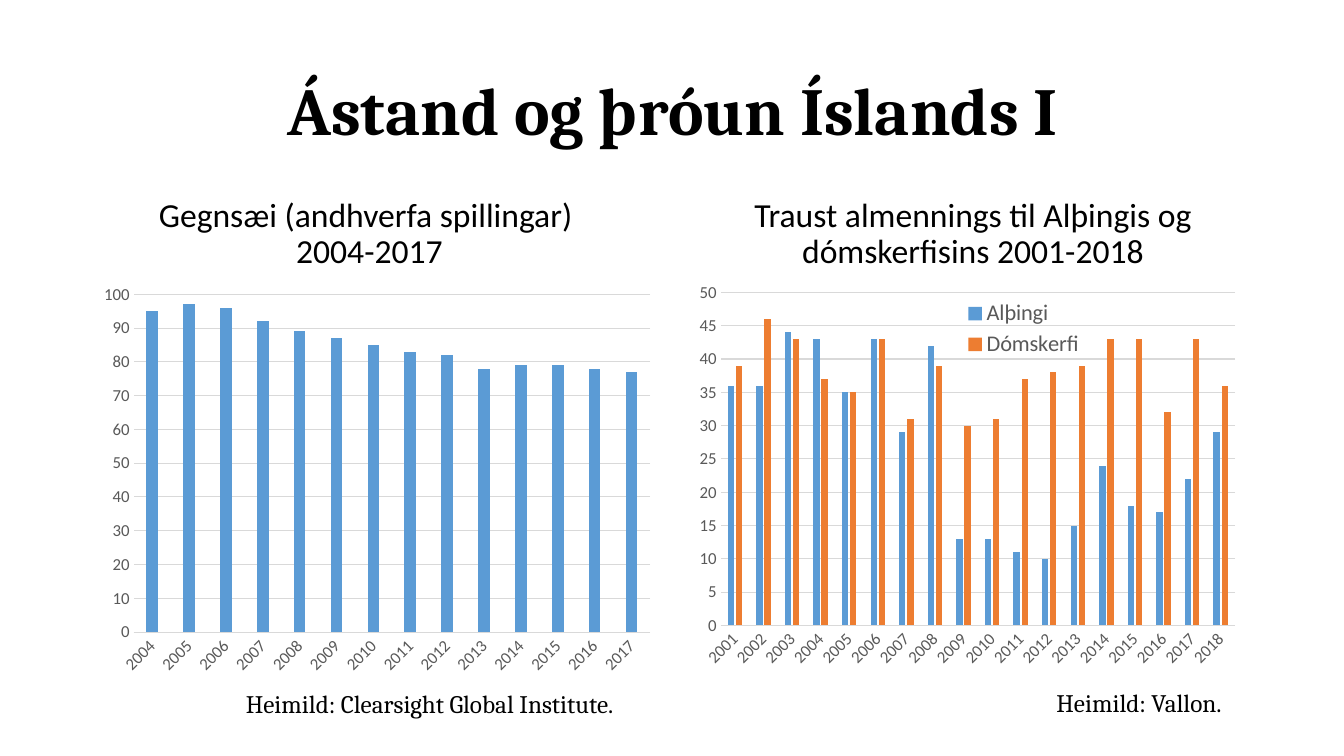
from pptx import Presentation
from pptx.chart.data import CategoryChartData
from pptx.dml.color import RGBColor
from pptx.enum.chart import XL_CHART_TYPE, XL_LEGEND_POSITION, XL_TICK_MARK
from pptx.enum.text import MSO_ANCHOR, PP_ALIGN
from pptx.oxml.xmlchemy import OxmlElement
from pptx.util import Inches, Pt

CLUSTERED = XL_CHART_TYPE.COLUMN_CLUSTERED
LEGEND_BOTTOM = XL_LEGEND_POSITION.BOTTOM
NO_TICK = XL_TICK_MARK.NONE
TOP, MIDDLE, BOTTOM = MSO_ANCHOR.TOP, MSO_ANCHOR.MIDDLE, MSO_ANCHOR.BOTTOM
LEFT, CENTER = PP_ALIGN.LEFT, PP_ALIGN.CENTER

# Content
TITLE = "Ástand og þróun Íslands I"
PANELS = [
    {
        "heading": "Gegnsæi (andhverfa spillingar) \v2004-2017",
        "heading_at": (0.78, 1.84, 5.77, 0.9),
        "source": "Heimild: Clearsight Global Institute.",
        "source_at": (2.34, 6.78, 4.22, 0.4),
        "chart_at": (0.92, 2.74, 5.64, 4.03),
        "years": range(2004, 2018),
        "series": {
            "Gegnsæi": [95, 97, 96, 92, 89, 87, 85, 83, 82, 78, 79, 79, 78, 77],
        },
        "scale": (100, 10),
    },
    {
        "heading": "Traust almennings til Alþingis og dómskerfisins 2001-2018",
        "heading_at": (6.56, 1.84, 6.18, 0.9),
        "source": "Heimild: Vallon.",
        "source_at": (10.38, 6.77, 1.93, 0.4),
        "chart_at": (6.75, 2.74, 5.67, 4.03),
        "years": range(2001, 2019),
        "series": {
            "Alþingi": [36, 36, 44, 43, 35, 43, 29, 42, 13,
                        13, 11, 10, 15, 24, 18, 17, 22, 29],
            "Dómskerfi": [39, 46, 43, 37, 35, 43, 31, 39, 30,
                          31, 37, 38, 39, 43, 43, 32, 43, 36],
        },
        "scale": (50, 5),
        "plot_at": (0.07, 0.04, 0.9, 0.82),
        "legend_at": (0.49, 0.05, 0.22, 0.16),
    },
]

THEME = {
    "heading_font": "Cambria",
    "body_font": "Calibri",
    "text": RGBColor.from_string("000000"),
    "label": RGBColor.from_string("595959"),
    "grid": RGBColor.from_string("D9D9D9"),
    "series": [RGBColor.from_string(c) for c in ("5B9BD5", "ED7D31")],
    "title_size": 48,
    "heading_size": 24,
    "source_size": 18,
    "legend_size": 16,
    "axis_size": 12,
}


def style_font(font, name, size, color, bold=False):
    font.name, font.size, font.bold = name, Pt(size), bold
    font.color.rgb = color


def add_text(slide, text, at, font_name, size, anchor=TOP, align=LEFT,
             spacing=1.0, bold=False):
    frame = slide.shapes.add_textbox(*map(Inches, at)).text_frame
    frame.word_wrap = True
    frame.vertical_anchor = anchor
    frame.text = text
    paragraph = frame.paragraphs[0]
    paragraph.alignment, paragraph.line_spacing = align, spacing
    for run in paragraph.runs:
        style_font(run.font, font_name, size, THEME["text"], bold)


def manual_layout(at, inner=False):
    """Chart layout given as fractions of the chart area."""
    layout = OxmlElement("c:layout")
    manual = OxmlElement("c:manualLayout")
    layout.append(manual)
    settings = [("layoutTarget", "inner")] if inner else []
    settings += [("xMode", "edge"), ("yMode", "edge"), *zip("xywh", at)]
    for tag, value in settings:
        setting = OxmlElement(f"c:{tag}")
        setting.set("val", str(value))
        manual.append(setting)
    return layout


def place(part, layout, index):
    for old in part.xpath("c:layout"):
        part.remove(old)
    part.insert(index, layout)


def style_axes(chart, scale):
    years, values = chart.category_axis, chart.value_axis
    for axis in (years, values):
        axis.major_tick_mark = axis.minor_tick_mark = NO_TICK
        style_font(axis.tick_labels.font, THEME["body_font"],
                   THEME["axis_size"], THEME["label"])
    years._element.xpath("c:txPr/a:bodyPr")[0].set("rot", "-2700000")
    values.minimum_scale = 0
    values.maximum_scale, values.major_unit = scale
    values.has_major_gridlines = True
    values.format.line.fill.background()
    for line in (years.format.line, values.major_gridlines.format.line):
        line.color.rgb, line.width = THEME["grid"], Pt(0.75)


def add_columns(slide, panel):
    data = CategoryChartData()
    data.categories = [str(year) for year in panel["years"]]
    for name, values in panel["series"].items():
        data.add_series(name, values)
    chart = slide.shapes.add_chart(
        CLUSTERED, *map(Inches, panel["chart_at"]), data).chart
    chart.has_title = False
    style_font(chart.font, THEME["body_font"], 10, THEME["text"])
    style_axes(chart, panel["scale"])

    columns = chart.plots[0]
    columns.gap_width, columns.overlap = 219, -27
    columns.vary_by_categories = False
    for series, color in zip(columns.series, THEME["series"]):
        series.format.fill.solid()
        series.format.fill.fore_color.rgb = color

    chart.has_legend = "legend_at" in panel
    if chart.has_legend:
        legend = chart.legend
        legend.position = LEGEND_BOTTOM
        legend.include_in_layout = True
        style_font(legend.font, THEME["body_font"], THEME["legend_size"],
                   THEME["label"])
        place(legend._element, manual_layout(panel["legend_at"]), 1)
    if "plot_at" in panel:
        plot_area = chart._chartSpace.xpath("c:chart/c:plotArea")[0]
        place(plot_area, manual_layout(panel["plot_at"], inner=True), 0)


def main():
    deck = Presentation()
    deck.slide_width, deck.slide_height = Inches(13.33), Inches(7.5)
    slide = deck.slides.add_slide(deck.slide_layouts[6])

    # Title
    add_text(slide, TITLE, (0.92, 0.4, 11.5, 1.45), THEME["heading_font"],
             THEME["title_size"], MIDDLE, CENTER, 0.9, bold=True)

    # Heading, chart and source of each panel
    for panel in PANELS:
        add_text(slide, panel["heading"], panel["heading_at"],
                 THEME["body_font"], THEME["heading_size"], BOTTOM, CENTER, 0.9)
        add_columns(slide, panel)
        add_text(slide, panel["source"], panel["source_at"],
                 THEME["heading_font"], THEME["source_size"])

    deck.save("out.pptx")


if __name__ == "__main__":
    main()
